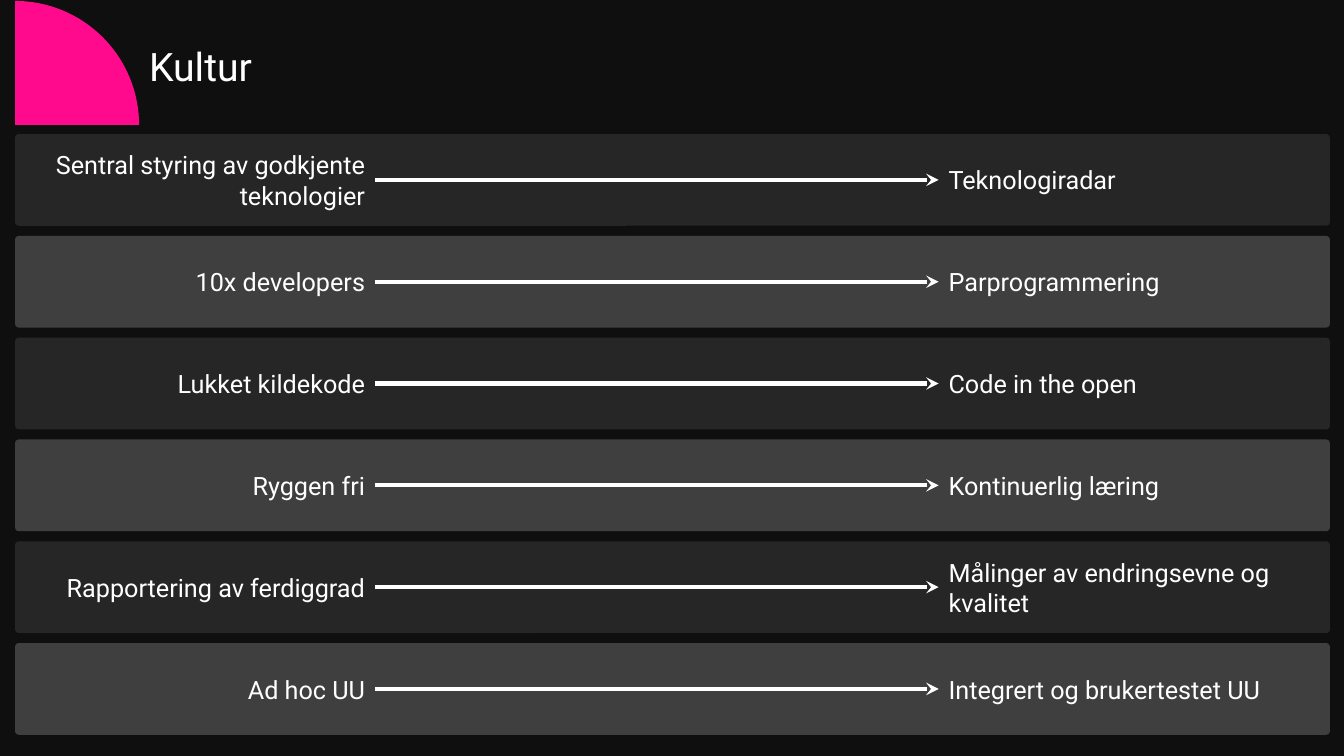
import math

import lxml.etree
import pptx
import pptx.chart.data
import pptx.dml.color
import pptx.enum.shapes
import pptx.enum.text
import pptx.oxml.ns
import pptx.util

Inches = pptx.util.Inches
Align = pptx.enum.text.PP_ALIGN
Anchor = pptx.enum.text.MSO_ANCHOR
COLORS = {
    "background": "0F0F0F",
    "dark": "262626",
    "light": "3F3F3F",
    "accent": "FF098D",
    "white": "FFFFFF",
}
COLORS = {name: pptx.dml.color.RGBColor.from_string(value) for name, value in COLORS.items()}
FONT = "Roboto"

LEFT, ARROW_START, ARROW_END, RIGHT = 0.15, 3.72, 9.31, 13.19
FIRST_ROW, ROW_PITCH, ROW_HEIGHT = 1.33, 1.01, 0.91
LABEL_HEIGHT = 0.4
RADIUS, CORNER_BOTTOM = 1.23, 1.24
ARC_STEPS = 60

CHANGES = [
    ("Sentral styring av godkjente teknologier", "Teknologiradar"),
    ("10x developers", "Parprogrammering"),
    ("Lukket kildekode", "Code in the open"),
    ("Ryggen fri", "Kontinuerlig læring"),
    ("Rapportering av ferdiggrad", "Målinger av endringsevne og kvalitet"),
    ("Ad hoc UU", "Integrert og brukertestet UU"),
]

presentation = pptx.Presentation()
presentation.slide_width = Inches(13.33)
presentation.slide_height = Inches(7.5)
slide = presentation.slides.add_slide(presentation.slide_layouts[6])
slide.background.fill.solid()
slide.background.fill.fore_color.rgb = COLORS["background"]


def add_text(text, left, top, width, height, size=18, align=Align.LEFT, anchor=Anchor.MIDDLE, wrap=True):
    box = slide.shapes.add_textbox(Inches(left), Inches(top), Inches(width), Inches(height))
    frame = box.text_frame
    frame.word_wrap = wrap
    frame.vertical_anchor = anchor
    paragraph = frame.paragraphs[0]
    paragraph.alignment = align
    run = paragraph.add_run()
    run.text = text
    run.font.name = FONT
    run.font.size = pptx.util.Pt(size)
    run.font.color.rgb = COLORS["white"]


def paint(shape, color):
    shape.shadow.inherit = False
    shape.fill.solid()
    shape.fill.fore_color.rgb = COLORS[color]
    shape.line.fill.background()


add_text("Kultur", LEFT + RADIUS, 0.37, RADIUS, 0.57, size=28, anchor=Anchor.TOP, wrap=False)

angles = [math.pi / 2 * step / ARC_STEPS for step in range(ARC_STEPS + 1)]
arc = [
    (Inches(LEFT + RADIUS * math.cos(angle)), Inches(CORNER_BOTTOM - RADIUS * math.sin(angle)))
    for angle in angles
]
outline = slide.shapes.build_freeform(Inches(LEFT), Inches(CORNER_BOTTOM))
outline.add_line_segments(arc, close=True)
paint(outline.convert_to_shape(), "accent")

for row, (before, after) in enumerate(CHANGES):
    top = FIRST_ROW + row * ROW_PITCH
    middle = top + ROW_HEIGHT / 2
    label_top = middle - LABEL_HEIGHT / 2

    band = slide.shapes.add_shape(
        pptx.enum.shapes.MSO_SHAPE.ROUNDED_RECTANGLE,
        Inches(LEFT), Inches(top), Inches(RIGHT - LEFT), Inches(ROW_HEIGHT),
    )
    band.adjustments[0] = 0.04
    paint(band, "light" if row % 2 else "dark")

    arrow = slide.shapes.add_connector(
        pptx.enum.shapes.MSO_CONNECTOR.STRAIGHT,
        Inches(ARROW_START), Inches(middle), Inches(ARROW_END), Inches(middle),
    )
    arrow.line.color.rgb = COLORS["white"]
    arrow.line.width = pptx.util.Pt(3)
    line = arrow.line._get_or_add_ln()
    lxml.etree.SubElement(line, pptx.oxml.ns.qn("a:tailEnd"), type="stealth")
    lxml.etree.SubElement(arrow._element.spPr, pptx.oxml.ns.qn("a:effectLst"))

    add_text(before, LEFT, label_top, ARROW_START - LEFT, LABEL_HEIGHT, align=Align.RIGHT)
    add_text(after, ARROW_END, label_top, RIGHT - ARROW_END, LABEL_HEIGHT)

presentation.save("out.pptx")
